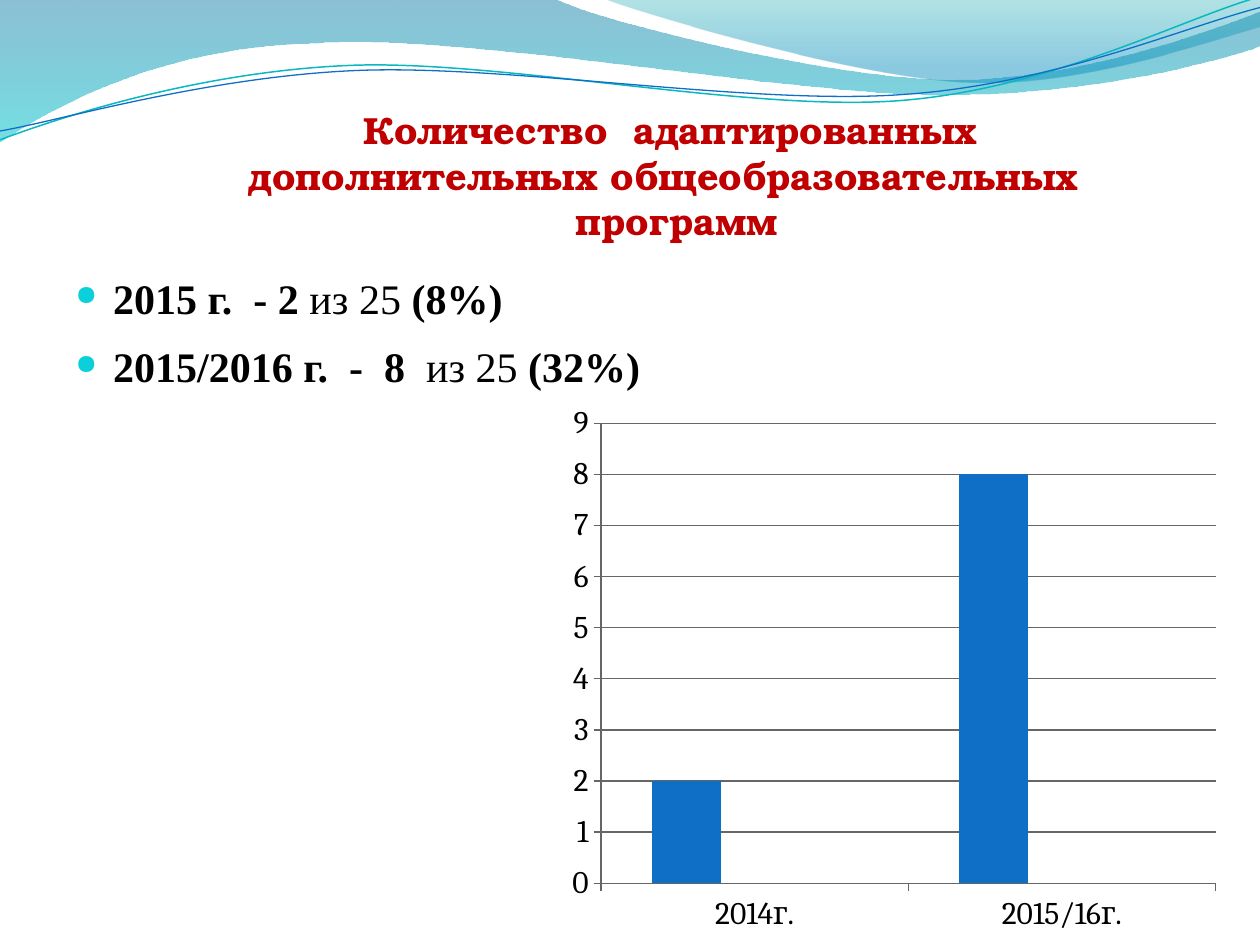
from lxml.etree import SubElement as Sub
from pptx import Presentation
from pptx.chart.data import CategoryChartData as Data
from pptx.dml.color import RGBColor as RGB
from pptx.enum.chart import XL_CHART_TYPE as Kind, XL_TICK_MARK as Tick
from pptx.enum.text import MSO_ANCHOR as Anchor, MSO_AUTO_SIZE as Fit, PP_ALIGN as Align
from pptx.oxml.ns import qn
from pptx.util import Inches, Pt

BLACK = RGB(0, 0, 0)
RED = RGB(0xC0, 0, 0)
GRAY = RGB(0x66, 0x66, 0x66)
BLUE = RGB(0x0F, 0x6F, 0xC6)
SKY = RGB(0, 0x9D, 0xD9)
AQUA = RGB(0x0B, 0xD0, 0xD9)
TEAL = RGB(0x0A, 0xB8, 0xBF)
DEEP = RGB(0, 0x74, 0xA1)
CYAN = RGB(0, 0xC6, 0xCF)
SEA = RGB(0, 0xA1, 0xA9)
LAKE = RGB(0, 0x8B, 0xBF)

BANDS = [
    ([(0, 0), (4.4, -0.01), (4.76, 0.17, 6.64, 0.63, 7.58, 0.63),
      (8.53, 0.63, 9.58, 0.26, 10, 0.09), (10.01, 0.36),
      (9.83, 0.44, 8.7, 0.76, 7.46, 0.75), (6.22, 0.75, 3.82, 0.28, 2.57, 0.34),
      (1.29, 0.36, 0.46, 0.83, -0.01, 1.13), (0, 0)],
     [(0, DEEP, 45), (1, CYAN, 55)]),
    ([(4.79, -0.01), (5.09, 0.11, 6.82, 0.62, 7.69, 0.65),
      (8.56, 0.69, 9.61, 0.32, 10, 0.21), (10, 0), (4.79, -0.01)],
     [(0, SEA, 30), (0.8, LAKE, 45)]),
]
LINES = [
    ([(0, 1.11), (0.48, 0.93, 1.58, 0.57, 2.77, 0.52),
      (3.95, 0.47, 5.93, 0.89, 7.13, 0.8), (8.33, 0.71, 9.38, 0.15, 9.98, -0.02)],
     TEAL, 0.85),
    ([(0, 1.04), (0.47, 0.96, 1.64, 0.61, 2.83, 0.56),
      (4.03, 0.51, 5.97, 0.84, 7.17, 0.75), (8.36, 0.67, 9.41, 0.21, 10, 0.06)],
     BLUE, 0.75),
]
ITEMS = [("2015 г.  - 2 ", "из 25 ", "(8%)"),
         ("2015/2016 г.  -  8  ", "из 25 ", "(32%)")]


def draw(slide, parts, left, top, close):
    ends = [(left + Inches(p[-2]), top + Inches(p[-1])) for p in parts]
    pen = slide.shapes.build_freeform(*ends[0])
    pen.add_line_segments(ends[1:], close=close)
    shape = pen.convert_to_shape()
    shape.shadow.inherit = False
    edges = list(shape._element.iter(qn("a:lnTo")))
    for edge, part in zip(edges, parts[1:]):
        if len(part) == 2:
            continue
        curve = edge.makeelement(qn("a:cubicBezTo"))
        for x, y in zip(part[::2], part[1::2]):
            Sub(curve, qn("a:pt"), x=str(left + Inches(x) - shape.left),
                y=str(top + Inches(y) - shape.top))
        edge.getparent().replace(edge, curve)
    return shape


def add_waves(slide, left, top):
    for parts, stops in BANDS:
        band = draw(slide, parts, left, top, True)
        band.line.fill.background()
        band.fill.gradient()
        band.fill.gradient_angle = 270
        for stop, (place, color, _) in zip(band.fill.gradient_stops, stops):
            stop.position = place
            stop.color.rgb = color
        tints = band._element.spPr.iter(qn("a:srgbClr"))
        for tint, (_, _, alpha) in zip(list(tints), stops):
            Sub(tint, qn("a:alpha"), val=str(alpha * 1000))
    for parts, color, width in LINES:
        wave = draw(slide, parts, left, top, False)
        wave.fill.background()
        wave.line.color.rgb = color
        wave.line.width = Pt(width)


def set_font(font, name, size, color, bold=None):
    font.name, font.size, font.bold = name, Pt(size), bold
    font.color.rgb = color


def add_title(slide, left, top, width, height):
    title = slide.shapes.title
    title.left, title.top, title.width, title.height = left, top, width, height
    frame = title.text_frame
    frame.auto_size = Fit.NONE
    frame.word_wrap = True
    frame.vertical_anchor = Anchor.BOTTOM
    frame.margin_left = frame.margin_right = frame.margin_bottom = 0
    para = frame.paragraphs[0]
    para.text = "Количество  адаптированных\vдополнительных общеобразовательных \v программ"
    para.alignment = Align.CENTER
    set_font(para.font, "TeX Gyre Bonum", 21.6, RED, True)


def add_bullet(para):
    props = para._p.get_or_add_pPr()
    props.set("marL", str(Inches(0.3)))
    props.set("indent", str(-Inches(0.3)))
    tone = Sub(props, qn("a:buClr"))
    Sub(tone, qn("a:srgbClr"), val=str(AQUA))
    Sub(props, qn("a:buSzPct"), val="66000")
    Sub(props, qn("a:buChar"), char="●")


def add_list(slide, left, top, width, height):
    frame = slide.shapes.add_textbox(left, top, width, height).text_frame
    frame.word_wrap = True
    for n, item in enumerate(ITEMS):
        para = frame.add_paragraph() if n else frame.paragraphs[0]
        para.space_after = Pt(10.5)
        add_bullet(para)
        set_font(para.font, "Times New Roman", 24, BLACK)
        for text, bold in zip(item, (True, False, True)):
            run = para.add_run()
            run.text = text
            run.font.bold = bold


def set_plot(chart, **sides):
    area = chart._chartSpace.chart.plotArea
    for old in area.findall(qn("c:layout")):
        area.remove(old)
    outer = Sub(area, qn("c:layout"))
    area.insert(0, outer)
    inner = Sub(outer, qn("c:manualLayout"))
    Sub(inner, qn("c:layoutTarget"), val="inner")
    for side in "xy":
        Sub(inner, qn(f"c:{side}Mode"), val="edge")
    for side, share in sides.items():
        Sub(inner, qn(f"c:{side}"), val=str(share))


def add_graph(slide, left, top, width, height):
    data = Data()
    data.categories = ["2014г.", "2015/16г."]
    for n, vals in enumerate([(2, 8), (None, None), (None, None)], 1):
        data.add_series(f"Series {n}", vals)
    chart = slide.shapes.add_chart(
        Kind.COLUMN_CLUSTERED, left, top, width, height, data).chart
    chart.has_legend = chart.has_title = False
    set_font(chart.font, "Cambria", 18, BLACK)
    plot = chart.plots[0]
    plot.vary_by_categories = False
    plot.gap_width, plot.overlap = 150, 0
    for series, color in zip(plot.series, (BLUE, SKY, AQUA)):
        series.format.fill.solid()
        series.format.fill.fore_color.rgb = color
    scale = chart.value_axis
    scale.minimum_scale, scale.maximum_scale, scale.major_unit = 0, 9, 1
    scale.has_major_gridlines = True
    for axis in (scale, chart.category_axis):
        axis.major_tick_mark = Tick.OUTSIDE
    for part in (scale, chart.category_axis, scale.major_gridlines):
        part.format.line.color.rgb = GRAY
        part.format.line.width = Pt(0.75)
    set_plot(chart, x=0.066, y=0.094, w=0.805, h=0.799)


def main():
    deck = Presentation()
    deck.slide_width, deck.slide_height = Inches(10), Inches(7.5)
    slide = deck.slides.add_slide(deck.slide_layouts[5])
    add_waves(slide, Inches(0), Inches(0))
    add_title(slide, Inches(1.06), Inches(0.76), Inches(8.52), Inches(1.17))
    add_list(slide, Inches(0.5), Inches(2.11), Inches(9.3), Inches(5.1))
    add_graph(slide, Inches(4.37), Inches(2.93), Inches(6.06), Inches(4.57))
    deck.save("out.pptx")


if __name__ == "__main__":
    main()
